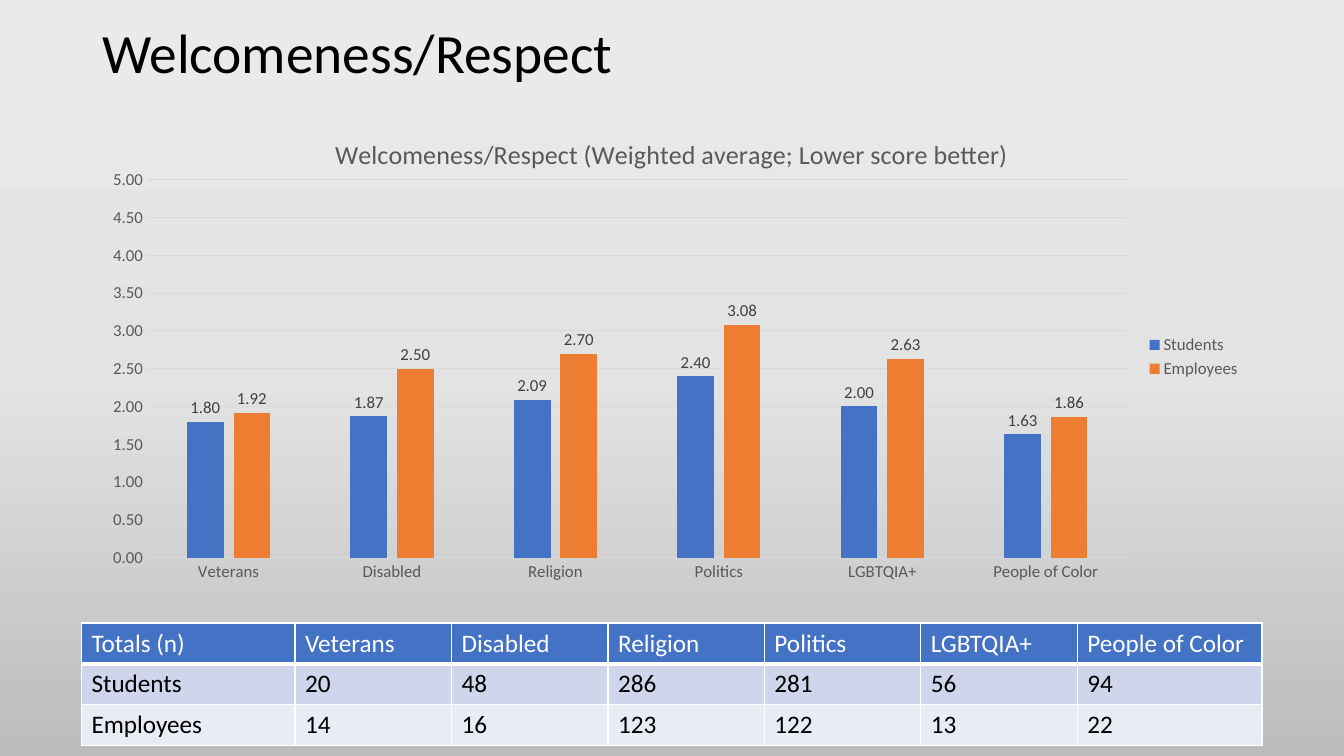
import copy
import lxml.etree as et
import pptx
import pptx.chart.data
import pptx.dml.color
import pptx.enum.chart
import pptx.enum.text
import pptx.oxml.ns
import pptx.util

Pt = pptx.util.Pt
qn = pptx.oxml.ns.qn
enum = pptx.enum.chart


def rgb(code):
    return pptx.dml.color.RGBColor.from_string(code)


class Deck:
    face = "Calibri"
    white = "FFFFFF"
    ink = "000000"
    gray = "595959"
    rule = "D9D9D9"

    def __init__(self, wide, high):
        self.prs = pptx.Presentation()
        self.prs.slide_width = Pt(wide)
        self.prs.slide_height = Pt(high)
        self.slide = self.prs.slides.add_slide(self.prs.slide_layouts[6])

    def font(self, font, size, color):
        font.name = self.face
        font.size = Pt(size)
        font.bold = False
        font.color.rgb = rgb(color)

    def back(self, colors):
        fill = self.slide.background.fill
        fill.gradient()
        fill.gradient_angle = 270
        stops = self.slide.element.find(".//" + qn("a:gsLst"))
        stops.append(copy.deepcopy(stops[0]))
        for i, (stop, color) in enumerate(zip(fill.gradient_stops, colors)):
            stop.position = i / (len(colors) - 1)
            stop.color.rgb = rgb(color)

    def title(self, text, box, size):
        frame = self.slide.shapes.add_textbox(*map(Pt, box)).text_frame
        frame.word_wrap = True
        frame.vertical_anchor = pptx.enum.text.MSO_ANCHOR.MIDDLE
        para = frame.paragraphs[0]
        para.text = text
        para.line_spacing = 0.9
        self.font(para.runs[0].font, size, self.ink)

    def chart(self, head, cats, series, box, plot):
        data = pptx.chart.data.CategoryChartData(number_format="0.00")
        data.categories = cats
        for name, vals, color in series:
            data.add_series(name, vals)
        chart = self.slide.shapes.add_chart(
            enum.XL_CHART_TYPE.COLUMN_CLUSTERED, *map(Pt, box), data).chart
        self.font(chart.font, 10, self.ink)
        chart.has_title = True
        para = chart.chart_title.text_frame.paragraphs[0]
        para.text = head
        self.font(para.runs[0].font, 18.6, self.gray)
        chart.chart_title.include_in_layout = False
        chart.has_legend = True
        chart.legend.position = enum.XL_LEGEND_POSITION.RIGHT
        chart.legend.include_in_layout = False
        self.font(chart.legend.font, 12, self.gray)
        self.axes(chart)
        bars = chart.plots[0]
        bars.gap_width = 219
        bars.overlap = -27
        bars.vary_by_categories = False
        for item, (name, vals, color) in zip(bars.series, series):
            item.format.fill.solid()
            item.format.fill.fore_color.rgb = rgb(color)
            item.invert_if_negative = False
            tags = item.data_labels
            tags.show_value = True
            tags.number_format = "0.00"
            tags.number_format_is_linked = False
            tags.position = enum.XL_LABEL_POSITION.OUTSIDE_END
            self.font(tags.font, 12, "404040")
        self.place(chart, plot)

    def axes(self, chart):
        cat, val = chart.category_axis, chart.value_axis
        for axis in (cat, val):
            axis.major_tick_mark = enum.XL_TICK_MARK.NONE
            axis.minor_tick_mark = enum.XL_TICK_MARK.NONE
            self.font(axis.tick_labels.font, 12, self.gray)
        val.minimum_scale = 0
        val.maximum_scale = 5
        val.major_unit = 0.5
        val.tick_labels.number_format = "0.00"
        val.tick_labels.number_format_is_linked = False
        val.format.line.fill.background()
        val.has_major_gridlines = True
        for line in (cat.format.line, val.major_gridlines.format.line):
            line.color.rgb = rgb(self.rule)
            line.width = Pt(0.75)

    def place(self, chart, plot):
        area = chart.element.find(".//" + qn("c:plotArea"))
        for old in area.findall(qn("c:layout")):
            area.remove(old)
        out = et.Element(qn("c:layout"))
        area.insert(0, out)
        spot = et.SubElement(out, qn("c:manualLayout"))
        tags = [("layoutTarget", "inner"), ("xMode", "edge"), ("yMode", "edge")]
        for tag, val in tags + list(zip("xywh", plot)):
            et.SubElement(spot, qn("c:" + tag)).set("val", str(val))

    def edge(self, cell, side, width):
        line = et.SubElement(cell._tc.get_or_add_tcPr(), qn("a:ln" + side))
        line.set("w", str(Pt(width)))
        fill = et.SubElement(line, qn("a:solidFill"))
        et.SubElement(fill, qn("a:srgbClr")).set("val", self.white)

    def table(self, rows, cols, high, spot, fills):
        size = sum(cols), high * len(rows)
        table = self.slide.shapes.add_table(
            len(rows), len(cols), *map(Pt, spot + size)).table
        for col, wide in zip(table.columns, cols):
            col.width = Pt(wide)
        for r, (row, color) in enumerate(zip(rows, fills)):
            table.rows[r].height = Pt(high)
            for c, text in enumerate(row):
                cell = table.cell(r, c)
                for side in "LRTB":
                    self.edge(cell, side, 3 if r == 0 and side == "B" else 1)
                cell.fill.solid()
                cell.fill.fore_color.rgb = rgb(color)
                para = cell.text_frame.paragraphs[0]
                para.text = str(text)
                self.font(para.runs[0].font, 18, self.ink if r else self.white)


def main():
    groups = ["Veterans", "Disabled", "Religion", "Politics", "LGBTQIA+",
              "People of Color"]
    deck = Deck(960, 540)
    deck.back(["EBEAEA", "E4E3E3", "BDBCBC"])
    deck.title("Welcomeness/Respect", (66, 15.8, 828, 48.2), 39.6)
    deck.chart(
        "Welcomeness/Respect (Weighted average; Lower score better)", groups,
        [("Students", [1.8, 1.87, 2.09, 2.4, 2, 1.63], "4472C4"),
         ("Employees", [1.92, 2.5, 2.7, 3.08, 2.63, 1.86], "ED7D31")],
        (66, 83.5, 828, 342.7), (0.047, 0.131, 0.846, 0.788))
    deck.table(
        [["Totals (n)"] + groups,
         ["Students", 20, 48, 286, 281, 56, 94],
         ["Employees", 14, 16, 123, 122, 13, 22]],
        [152.6] + [111.75] * 5 + [132], 29.2, (58.2, 445),
        ["4472C4", "CFD5EA", "E9EBF5"])
    deck.prs.save("out.pptx")


if __name__ == "__main__":
    main()
